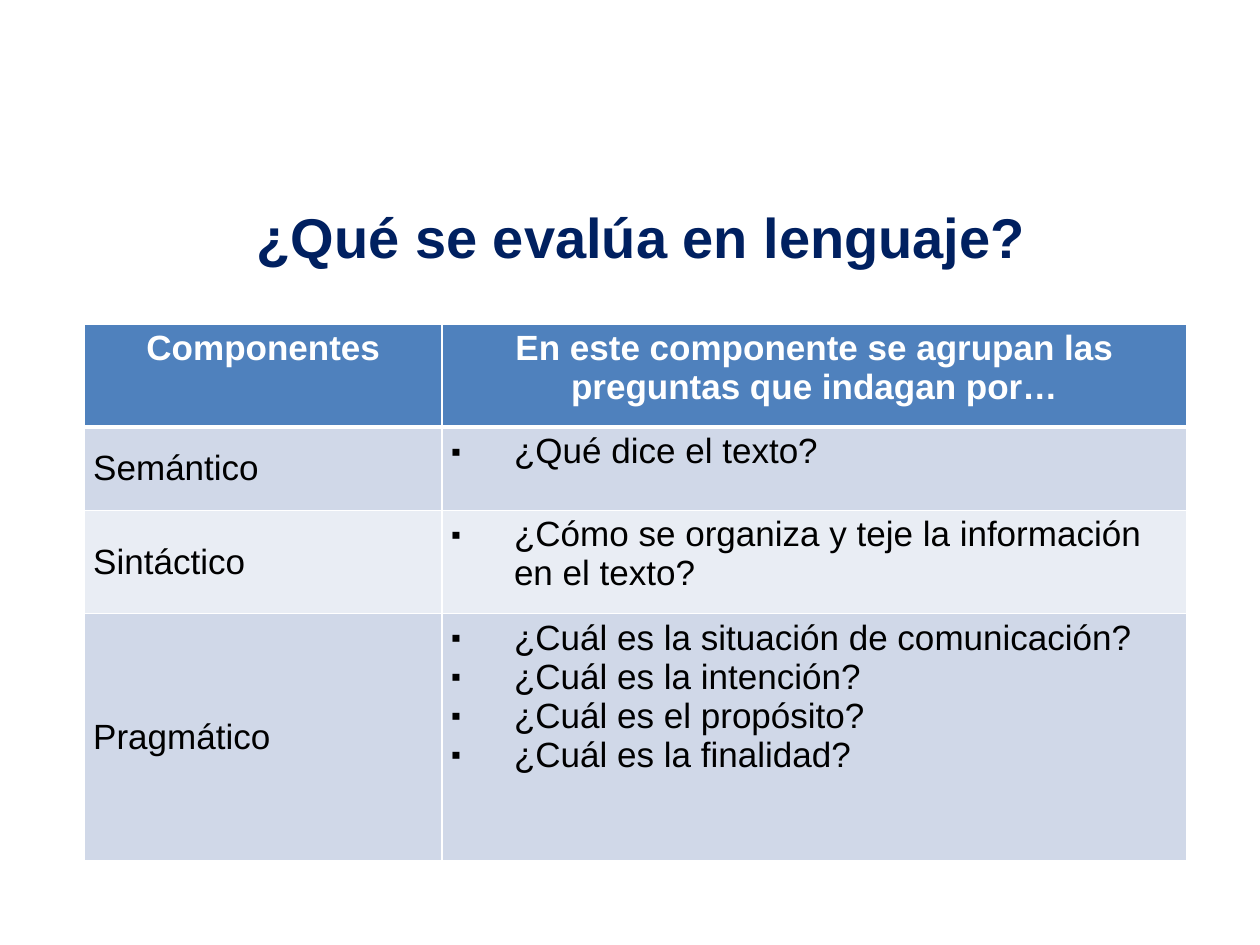
from dataclasses import dataclass

from lxml import etree
from pptx import Presentation
from pptx.dml.color import RGBColor
from pptx.enum.text import MSO_ANCHOR, PP_ALIGN
from pptx.oxml.ns import qn
from pptx.util import Inches, Pt

CENTER, LEFT = PP_ALIGN.CENTER, PP_ALIGN.LEFT
TOP, MIDDLE = MSO_ANCHOR.TOP, MSO_ANCHOR.MIDDLE

SLIDE_W, SLIDE_H = 10, 7.5
COLORS = {
    "title": "002060", "header": "4F81BD", "odd": "D0D8E8",
    "even": "E9EDF4", "white": "FFFFFF", "black": "000000",
}
MARGINS = {"margin_left": 0.07, "margin_right": 0.07,
           "margin_top": 0.04, "margin_bottom": 0.04}
COLUMN_WIDTHS = (2.84, 5.91)


@dataclass
class Component:
    name: str
    questions: list[str]
    height: float


@dataclass
class TextStyle:
    size: int
    color: str
    bold: bool = False
    align: PP_ALIGN = LEFT
    anchor: MSO_ANCHOR = TOP
    bullet: str = ""


TITLE = TextStyle(32, "title", bold=True, align=CENTER)
HEADER = TextStyle(20, "white", bold=True, align=CENTER)
NAME = TextStyle(20, "black", anchor=MIDDLE)
QUESTION = TextStyle(20, "black", bullet="▪")

HEADER_HEIGHT = 0.82
HEADINGS = ("Componentes",
            "En este componente se agrupan las preguntas que indagan por…")
COMPONENTS = [
    Component("Semántico", ["¿Qué dice el texto?"], 0.66),
    Component("Sintáctico",
              ["¿Cómo se organiza y teje la información en el texto?"], 0.82),
    Component("Pragmático",
              ["¿Cuál es la situación de comunicación?",
               "¿Cuál es la intención?",
               "¿Cuál es el propósito?",
               "¿Cuál es la finalidad?"], 1.96),
]


def add_bullet(para, mark: str) -> None:
    """Give a paragraph a hanging bullet at 80 % of the text size."""
    props = para._p.get_or_add_pPr()
    props.set("marL", str(Inches(0.5)))
    props.set("indent", str(-Inches(0.5)))
    etree.SubElement(props, qn("a:buSzPct")).set("val", "80000")
    etree.SubElement(props, qn("a:buFont")).set("typeface", "Arial")
    etree.SubElement(props, qn("a:buChar")).set("char", mark)


def write(frame, lines: list[str], style: TextStyle) -> None:
    frame.word_wrap = True
    font_values = {"name": "Arial", "size": Pt(style.size), "bold": style.bold}
    for index, line in enumerate(lines):
        para = frame.add_paragraph() if index else frame.paragraphs[0]
        para.alignment = style.align
        if style.bullet:
            add_bullet(para, style.bullet)
        span = para.add_run()
        span.text = line
        for key, value in font_values.items():
            setattr(span.font, key, value)
        span.font.color.rgb = RGBColor.from_string(COLORS[style.color])


def set_margins(target) -> None:
    for key, value in MARGINS.items():
        setattr(target, key, Inches(value))


def set_borders(cell, widths: dict[str, int]) -> None:
    props = cell._tc.get_or_add_tcPr()
    for position, (side, width) in enumerate(widths.items()):
        line = etree.Element(qn(f"a:{side}"), w=str(Pt(width)))
        fill = etree.SubElement(line, qn("a:solidFill"))
        etree.SubElement(fill, qn("a:srgbClr")).set("val", COLORS["white"])
        props.insert(position, line)


def fill_cell(cell, lines: list[str], style: TextStyle, fill: str,
              top: int = 1, bottom: int = 1) -> None:
    set_margins(cell)
    cell.vertical_anchor = style.anchor
    cell.fill.solid()
    cell.fill.fore_color.rgb = RGBColor.from_string(COLORS[fill])
    set_borders(cell, {"lnL": 1, "lnR": 1, "lnT": top, "lnB": bottom})
    write(cell.text_frame, lines, style)


def add_component_table(page) -> None:
    heights = [HEADER_HEIGHT] + [part.height for part in COMPONENTS]
    table = page.shapes.add_table(
        len(heights), len(COLUMN_WIDTHS), Inches(0.67), Inches(2.57),
        Inches(sum(COLUMN_WIDTHS)), Inches(sum(heights))).table
    for column, width in zip(table.columns, COLUMN_WIDTHS):
        column.width = Inches(width)
    for row, height in zip(table.rows, heights):
        row.height = Inches(height)

    # Header row, with a thick rule below
    for column, heading in enumerate(HEADINGS):
        fill_cell(table.cell(0, column), [heading], HEADER, "header", bottom=3)

    # One banded row for each component
    for row, part in enumerate(COMPONENTS, start=1):
        band = "odd" if row % 2 else "even"
        top = 3 if row == 1 else 1
        fill_cell(table.cell(row, 0), [part.name], NAME, band, top)
        fill_cell(table.cell(row, 1), part.questions, QUESTION, band, top)


def add_title(page) -> None:
    box = page.shapes.add_textbox(Inches(0.59), Inches(1.57),
                                  Inches(0.9 * SLIDE_W), Inches(0.81))
    set_margins(box.text_frame)
    write(box.text_frame, ["¿Qué se evalúa en lenguaje?"], TITLE)


def main() -> None:
    deck = Presentation()
    deck.slide_width, deck.slide_height = Inches(SLIDE_W), Inches(SLIDE_H)
    page = deck.slides.add_slide(deck.slide_layouts[6])
    add_component_table(page)
    add_title(page)
    deck.save("out.pptx")


if __name__ == "__main__":
    main()
